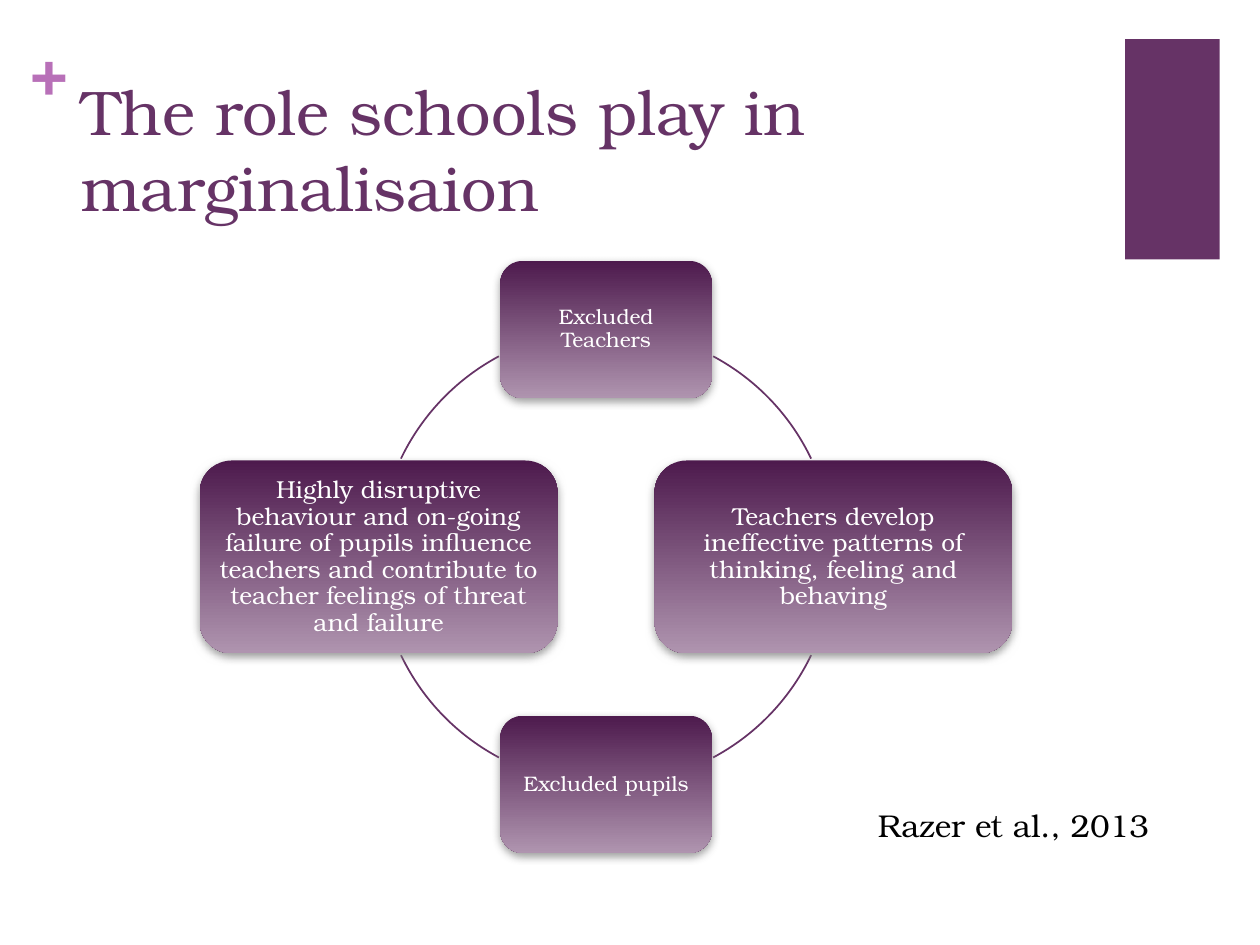
from lxml import etree
from pptx import Presentation
from pptx.dml.color import RGBColor
from pptx.enum import shapes, text
from pptx.oxml.ns import qn
from pptx.util import Inches, Pt

FONT = "TeX Gyre Bonum"
PURPLE = RGBColor(0x66, 0x33, 0x66)
DARK_PURPLE = RGBColor(0x4D, 0x1A, 0x4D)
PALE_PURPLE = RGBColor(0xAF, 0x94, 0xAF)
ORCHID = RGBColor(0xB8, 0x70, 0xB8)
WHITE = RGBColor(0xFF, 0xFF, 0xFF)
BLACK = RGBColor(0, 0, 0)


def write_text(shape, wording, size, color, inset=None):
    frame = shape.text_frame
    frame.word_wrap = True
    if inset is not None:
        frame.margin_left = frame.margin_right = Inches(inset)
        frame.margin_top = frame.margin_bottom = Inches(inset)
    paragraph = frame.paragraphs[0]
    paragraph.text = wording
    font = paragraph.runs[0].font
    font.name, font.size, font.color.rgb = FONT, Pt(size), color
    return paragraph


def add_soft_shadow(shape):
    """Give the shape a grey shadow falling straight down."""
    shape.shadow.inherit = False
    effects = shape._element.spPr.find(qn("a:effectLst"))
    shadow = etree.SubElement(effects, qn("a:outerShdw"), blurRad=str(Pt(5)),
                              dist=str(Pt(2)), dir="5400000", rotWithShape="0")
    color = etree.SubElement(shadow, qn("a:srgbClr"), val="808080")
    etree.SubElement(color, qn("a:alpha"), val="75000")


presentation = Presentation()
presentation.slide_width, presentation.slide_height = Inches(10), Inches(7.5)
slide = presentation.slides.add_slide(presentation.slide_layouts[6])

corner_block = slide.shapes.add_shape(
    shapes.MSO_SHAPE.RECTANGLE, Inches(8.93), Inches(0.31), Inches(0.75), Inches(1.75))
corner_block.shadow.inherit = False
corner_block.fill.solid()
corner_block.fill.fore_color.rgb = PURPLE
corner_block.line.fill.background()

plus = slide.shapes.add_textbox(Inches(0.24), Inches(0.25), Inches(0.29), Inches(0.61))
write_text(plus, "+", 36, ORCHID, inset=0).runs[0].font.bold = True

title = slide.shapes.add_textbox(Inches(0.55), Inches(0.53), Inches(8.26), Inches(1.22))
write_text(title, "The role schools play in marginalisaion", 36, PURPLE)

# Cycle: four boxes on a circle, with an arc in each gap
CENTER_X, CENTER_Y, RADIUS = 4.81, 4.42, 1.805
ARC_START, ARC_END = 25.6, 61.9  # degrees from the horizontal axis
SMALL = (1.68, 1.09, 12, 0.05)  # width, height, text size, inset
LARGE = (2.84, 1.53, 14, 0.06)
steps = [
    ("Excluded Teachers", 0, -1, SMALL),
    ("Teachers develop ineffective patterns of thinking, feeling and behaving", 1, 0, LARGE),
    ("Excluded pupils", 0, 1, SMALL),
    ("Highly disruptive behaviour and on-going failure of pupils influence teachers "
     "and contribute to teacher feelings of threat and failure", -1, 0, LARGE),
]

for start, end in [(ARC_START, ARC_END), (180 - ARC_END, 180 - ARC_START),
                   (180 + ARC_START, 180 + ARC_END), (360 - ARC_END, 360 - ARC_START)]:
    arc = slide.shapes.add_shape(
        shapes.MSO_SHAPE.ARC, Inches(CENTER_X - RADIUS), Inches(CENTER_Y - RADIUS),
        Inches(2 * RADIUS), Inches(2 * RADIUS))
    arc.shadow.inherit = False
    # Angles are stored in 1/60000 degree, adjustments in 1/100000
    arc.adjustments[0], arc.adjustments[1] = start * 0.6, end * 0.6
    arc.fill.background()
    arc.line.color.rgb = PURPLE
    arc.line.width = Pt(1)

for wording, across, down, (width, height, size, inset) in steps:
    box = slide.shapes.add_shape(
        shapes.MSO_SHAPE.ROUNDED_RECTANGLE,
        Inches(CENTER_X + across * RADIUS - width / 2),
        Inches(CENTER_Y + down * RADIUS - height / 2), Inches(width), Inches(height))
    box.fill.gradient()
    box.fill.gradient_angle = 270
    for stop, color, position in zip(box.fill.gradient_stops, (DARK_PURPLE, PALE_PURPLE), (0, 1)):
        stop.color.rgb = color
        stop.position = position
    box.line.fill.background()
    add_soft_shadow(box)
    paragraph = write_text(box, wording, size, WHITE, inset)
    paragraph.alignment = text.PP_ALIGN.CENTER
    paragraph.line_spacing = 0.9
    box.text_frame.vertical_anchor = text.MSO_ANCHOR.MIDDLE

citation = slide.shapes.add_textbox(Inches(6.87), Inches(6.35), Inches(2.74), Inches(0.42))
write_text(citation, "Razer et al., 2013", 18, BLACK)

presentation.save("out.pptx")
